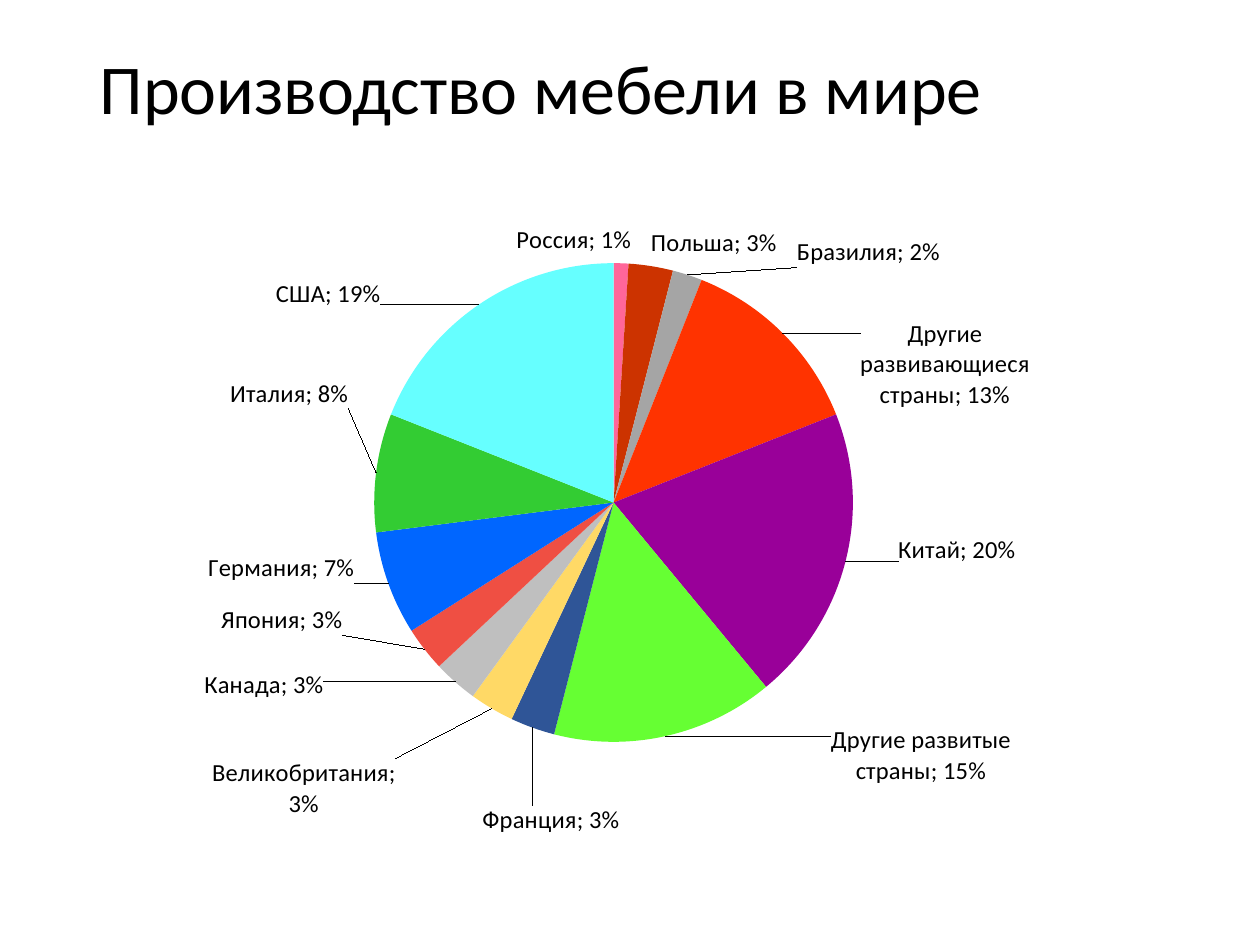
from dataclasses import dataclass
from math import cos, pi, sin

from lxml.etree import SubElement
from pptx import Presentation
from pptx.chart.data import CategoryChartData
from pptx.dml.color import RGBColor
from pptx.enum.chart import XL_CHART_TYPE, XL_LABEL_POSITION
from pptx.enum.text import MSO_ANCHOR, MSO_AUTO_SIZE, PP_ALIGN
from pptx.oxml import parse_xml
from pptx.oxml.ns import nsdecls, qn
from pptx.util import Emu, Pt

# Content: country, share, slice colour, label corner facing the pie (px)
TITLE = "Производство мебели в мире"
SLICES = [
    ("Россия", 0.01, "FF6699", (574, 256)),
    ("Польша", 0.03, "CC3300", (651, 259)),
    ("Бразилия", 0.02, "A5A5A5", (797, 268)),
    ("Другие развивающиеся страны", 0.13, "FF3300", (860, 410)),
    ("Китай", 0.20, "990099", (898, 535)),
    ("Другие развитые страны", 0.15, "66FF33", (831, 725)),
    ("Франция", 0.03, "2F5597", (620, 805)),
    ("Великобритания", 0.03, "FFD966", (396, 758)),
    ("Канада", 0.03, "BFBFBF", (324, 670)),
    ("Япония", 0.03, "EF4F43", (343, 605)),
    ("Германия", 0.07, "0066FF", (355, 553)),
    ("Италия", 0.08, "33CC33", (349, 409)),
    ("США", 0.19, "66FFFF", (381, 309)),
]


@dataclass
class Theme:
    font: str = "Calibri"
    text: RGBColor = RGBColor(0, 0, 0)
    title_size: Pt = Pt(40)
    chart_size: Pt = Pt(18)
    label_size: Pt = Pt(14)


THEME = Theme()
PX = 914400 // 126
SLIDE = (1260, 945)
TITLE_BOX = (87, 0, 1086, 184)
CHART_BOX = (154, 179, 979, 712)
PLOT = (0.225, 0.09, 0.489, 0.729)
LABEL_GAP = 7


def px(*lengths):
    return [Emu(n * PX) for n in lengths]


def style(font, size):
    font.name, font.size = THEME.font, size
    font.color.rgb = THEME.text


def layout_xml(x, y, size=""):
    return parse_xml(
        f'<c:layout {nsdecls("c")}><c:manualLayout>{size and "<c:layoutTarget val=%sinner%s/>" % (chr(34), chr(34))}'
        f'{size and "<c:xMode val=%sedge%s/><c:yMode val=%sedge%s/>" % ((chr(34),) * 4)}'
        f'<c:x val="{x:.4f}"/><c:y val="{y:.4f}"/>{size}</c:manualLayout></c:layout>')


def show_category(labels):
    """Show category and value, separated by a semicolon."""
    labels.find(qn("c:showCatName")).set("val", "1")
    separator = SubElement(labels, qn("c:separator"))
    separator.text = "; "
    labels.find(qn("c:showBubbleSize")).addnext(separator)


def label_offset(middle, corner):
    """Shift from the standard outside position, as a share of the chart."""
    left, top, width, height = CHART_BOX
    x, y, w, h = PLOT
    radius = min(w * width, h * height) / 2 + LABEL_GAP
    angle = 2 * pi * middle
    start_x = left + (x + w / 2) * width + radius * sin(angle)
    start_y = top + (y + h / 2) * height - radius * cos(angle)
    return (corner[0] - start_x) / width, (corner[1] - start_y) / height


prs = Presentation()
prs.slide_width, prs.slide_height = px(*SLIDE)
s = prs.slides.add_slide(prs.slide_layouts[5])

# Title
title = s.shapes.title
title.left, title.top, title.width, title.height = px(*TITLE_BOX)
tf = title.text_frame
tf.text = TITLE
tf.auto_size = MSO_AUTO_SIZE.NONE
tf.vertical_anchor = MSO_ANCHOR.MIDDLE
p = tf.paragraphs[0]
p.alignment = PP_ALIGN.LEFT
p.line_spacing = 0.9
style(p.font, THEME.title_size)

# Pie chart
data = CategoryChartData(number_format="0%")
data.categories = [name for name, *_ in SLICES]
data.add_series("Series 1", [share for _, share, *_ in SLICES])
chart = s.shapes.add_chart(XL_CHART_TYPE.PIE, *px(*CHART_BOX), data).chart
chart.has_legend = chart.has_title = False
style(chart.font, THEME.chart_size)
plot = chart.plots[0]
plot.vary_by_categories = True
area = chart._chartSpace.chart.plotArea
for old in area.findall(qn("c:layout")):
    area.remove(old)
x, y, w, h = PLOT
area.insert(0, layout_xml(x, y, f'<c:w val="{w}"/><c:h val="{h}"/>'))

# Labels shared by the series
series = plot.series[0]
labels = series.data_labels
labels.show_value = True
labels.number_format, labels.number_format_is_linked = "0%", False
labels.position = XL_LABEL_POSITION.OUTSIDE_END
style(labels.font, THEME.label_size)
all_labels = series._element.find(qn("c:dLbls"))
show_category(all_labels)
leaders = all_labels.find(qn("c:showLeaderLines"))
if leaders is None:
    leaders = SubElement(all_labels, qn("c:showLeaderLines"))
leaders.set("val", "1")

# Slice colours and label places
before = 0
for i, (name, share, color, corner) in enumerate(SLICES):
    point = series.points[i]
    point.format.fill.solid()
    point.format.fill.fore_color.rgb = RGBColor.from_string(color)
    point.format.line.fill.background()
    label = point.data_label
    style(label.font, THEME.label_size)
    label.position = XL_LABEL_POSITION.OUTSIDE_END
    item = all_labels.findall(qn("c:dLbl"))[i]
    show_category(item)
    item.insert(1, layout_xml(*label_offset(before + share / 2, corner)))
    item.insert(2, parse_xml(f'<c:numFmt {nsdecls("c")} formatCode="0%" sourceLinked="0"/>'))
    before += share

prs.save("out.pptx")
